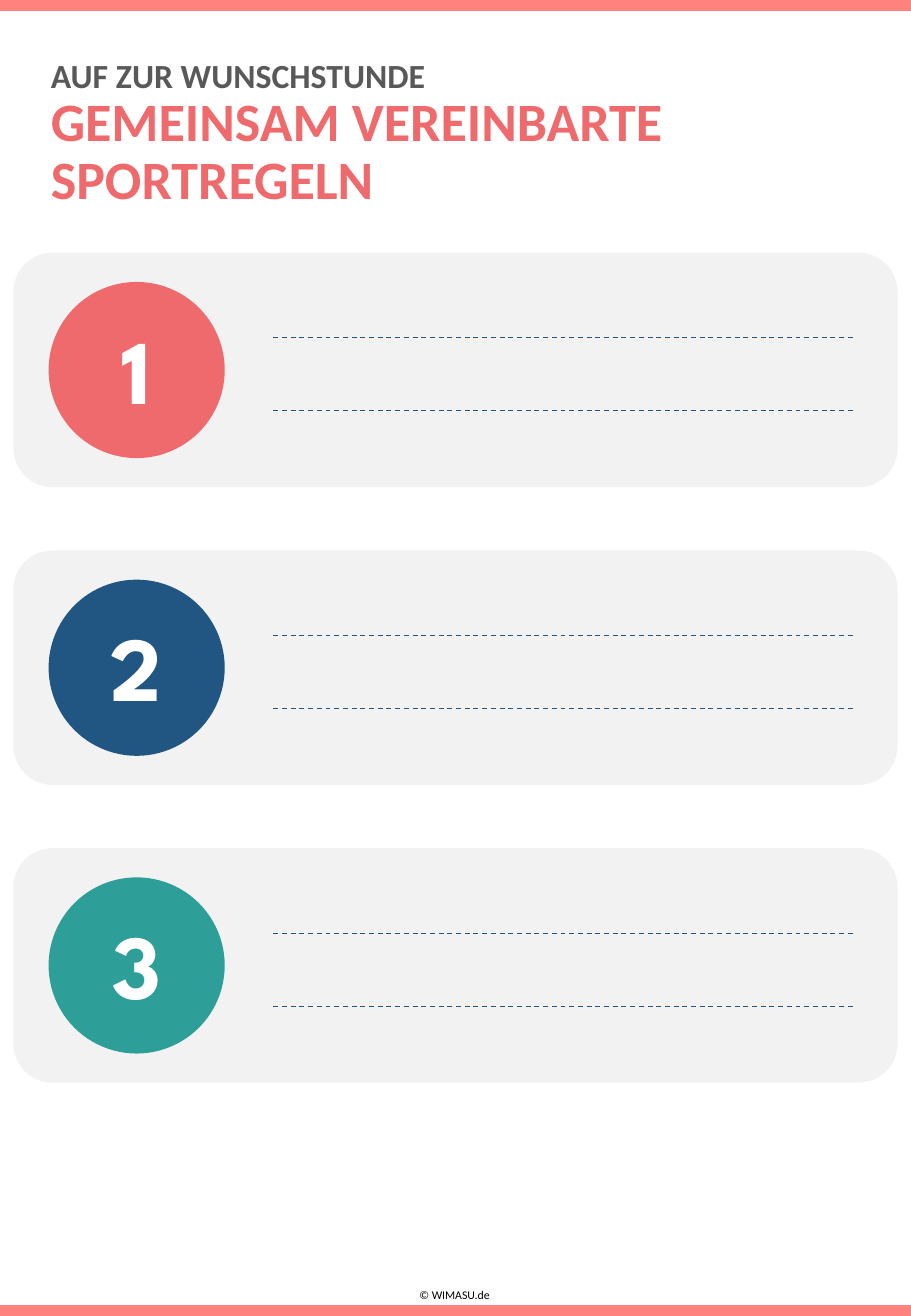
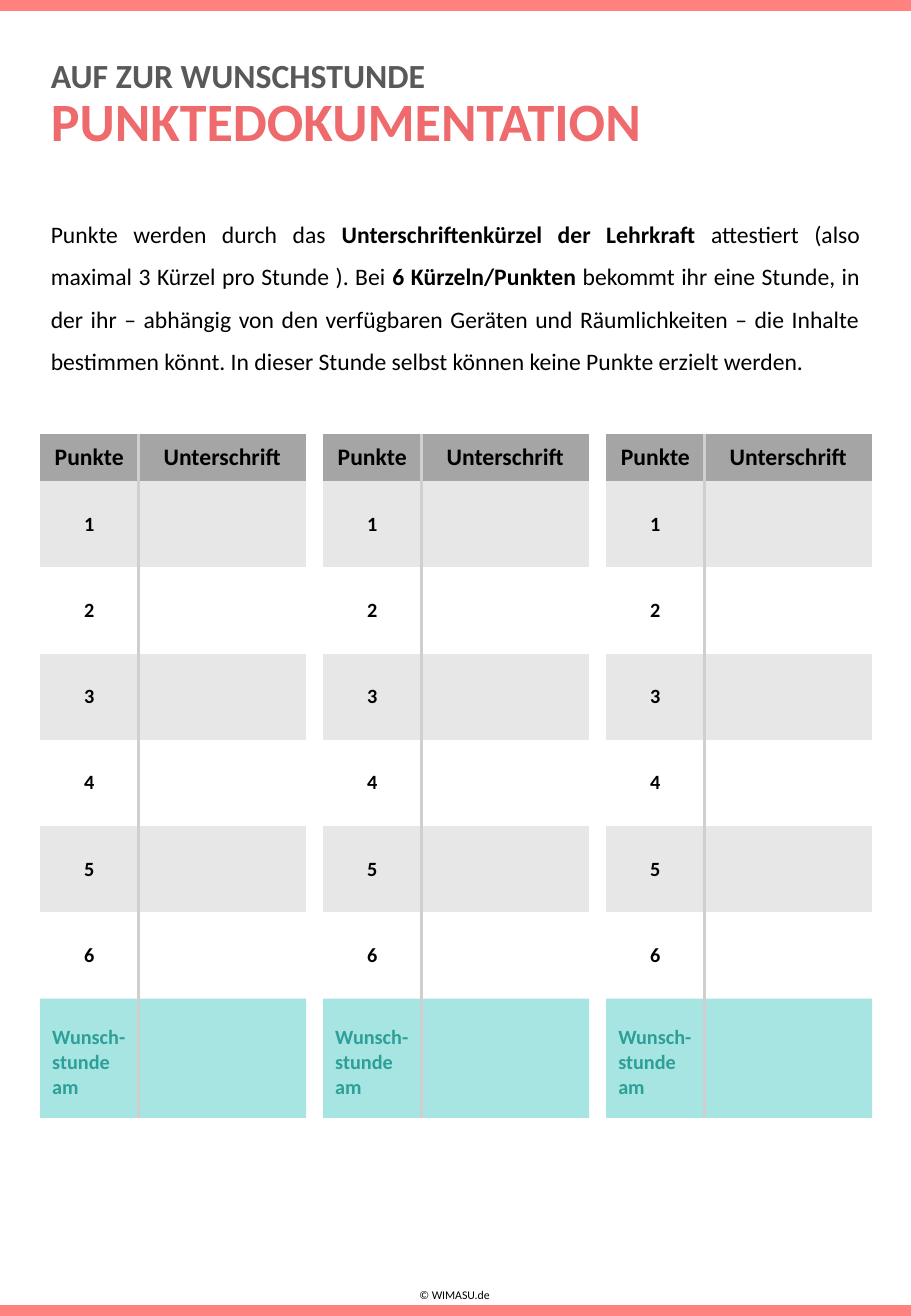
import pptx
import pptx.util
import pptx.dml.color
import pptx.enum.dml
import pptx.enum.shapes
import pptx.enum.text
import pptx.oxml
import pptx.oxml.ns
from pptx.util import Inches

CORAL = "EE6A6C"
BAND = "FF827E"
NAVY = "215682"
TEAL = "2E9F98"
MINT = "4ECDC4"
CARD_GREY = "F2F2F2"
HEAD_GREY = "A5A5A5"
ROW_GREY = "E7E7E7"
RULE_GREY = "D0CECE"
TEXT_GREY = "595959"
BLACK = "000000"
WHITE = "FFFFFF"
PAGE_WIDTH = 7.5
PAGE_HEIGHT = 10.83
BAND_HEIGHT = 0.09
TEXT_LEFT = 0.32
NO_TABLE_STYLE = "{2D5ABB26-0587-4C30-8999-92F81FD0307C}"
ALIGN = pptx.enum.text.PP_ALIGN
ANCHOR = pptx.enum.text.MSO_ANCHOR
SHAPE = pptx.enum.shapes.MSO_SHAPE


def color(value):
    return pptx.dml.color.RGBColor.from_string(value)


def add_span(para, text, size, fill, bold=False, font="Calibri"):
    span = para.add_run()
    span.text = text
    span.font.name = font
    span.font.size = pptx.util.Pt(size)
    span.font.bold = bold
    span.font.color.rgb = color(fill)


def add_box(page, left, top, width, height, align=ALIGN.LEFT, spacing=1.0, wrap=True):
    box = page.shapes.add_textbox(Inches(left), Inches(top), Inches(width), Inches(height))
    box.text_frame.word_wrap = wrap
    para = box.text_frame.paragraphs[0]
    para.alignment = align
    para.line_spacing = spacing
    return box, para


def add_shape(page, kind, left, top, width, height, fill):
    shape = page.shapes.add_shape(kind, Inches(left), Inches(top), Inches(width), Inches(height))
    shape.shadow.inherit = False
    shape.fill.solid()
    shape.fill.fore_color.rgb = color(fill)
    shape.line.fill.background()
    return shape


def add_writing_line(page, left, right, top):
    line = page.shapes.add_connector(
        pptx.enum.shapes.MSO_CONNECTOR.STRAIGHT,
        Inches(left), Inches(top), Inches(right), Inches(top))
    line.line.color.rgb = color(NAVY)
    line.line.width = pptx.util.Pt(0.75)
    line.line.dash_style = pptx.enum.dml.MSO_LINE.DASH
    line._element.spPr.append(pptx.oxml.parse_xml(
        f"<a:effectLst {pptx.oxml.ns.nsdecls('a')}/>"))


def add_page(deck, title):
    page = deck.slides.add_slide(deck.slide_layouts[6])
    for top in (0, PAGE_HEIGHT - BAND_HEIGHT):
        add_shape(page, SHAPE.RECTANGLE, 0, top, PAGE_WIDTH, BAND_HEIGHT, BAND)
    footer, para = add_box(page, 3.34, 10.55, 0.79, 0.22, ALIGN.RIGHT, wrap=False)
    footer.text_frame.auto_size = pptx.enum.text.MSO_AUTO_SIZE.SHAPE_TO_FIT_TEXT
    add_span(para, "© WIMASU.de", 7, BLACK)
    kicker, para = add_box(page, TEXT_LEFT, 0.47, 5.77, 0.37, spacing=0.9)
    kicker.text_frame.vertical_anchor = ANCHOR.BOTTOM
    add_span(para, "AUF ZUR WUNSCHSTUNDE", 20, TEXT_GREY, True)
    heading, para = add_box(page, TEXT_LEFT, 0.73, 5.77, 1.04, spacing=0.9)
    add_span(para, title, 32, CORAL, True)
    return page


def add_rule_card(page, number, top, fill):
    add_shape(page, SHAPE.ROUNDED_RECTANGLE, 0.11, top, 7.28, 1.93, CARD_GREY)
    add_shape(page, SHAPE.OVAL, 0.4, top + 0.24, 1.45, 1.45, fill)
    box, para = add_box(page, 0.4, top + 0.55, 1.45, 0.84, ALIGN.CENTER, 0.9)
    add_span(para, str(number), 54, WHITE, True, "League Spartan")
    for offset in (0.7, 1.3):
        add_writing_line(page, 2.25, 7.05, top + offset)


def fill_cell(cell, fill, alpha=None):
    cell.fill.solid()
    cell.fill.fore_color.rgb = color(fill)
    if alpha:
        tint = cell._tc.tcPr.find(".//" + pptx.oxml.ns.qn("a:srgbClr"))
        tint.append(pptx.oxml.parse_xml(
            f"<a:alpha {pptx.oxml.ns.nsdecls('a')} val='{alpha * 1000}'/>"))


def add_cell_border(cell, side):
    cell._tc.get_or_add_tcPr().insert(0, pptx.oxml.parse_xml(
        f"<a:{side} {pptx.oxml.ns.nsdecls('a')} w='19050'>"
        f"<a:solidFill><a:srgbClr val='{RULE_GREY}'/></a:solidFill></a:{side}>"))


def write_centered(cell, text, size):
    cell.vertical_anchor = ANCHOR.MIDDLE
    para = cell.text_frame.paragraphs[0]
    para.alignment = ALIGN.CENTER
    add_span(para, text, size, BLACK, True)


def add_points_table(page, left, top):
    heights = [0.39] + [0.71] * 6 + [0.98]
    table = page.shapes.add_table(
        len(heights), 2, Inches(left), Inches(top), Inches(2.19), Inches(sum(heights))).table
    table.first_row = False
    table.horz_banding = False
    table._tbl.tblPr.find(pptx.oxml.ns.qn("a:tableStyleId")).text = NO_TABLE_STYLE
    for column, width in zip(table.columns, (0.81, 1.38)):
        column.width = Inches(width)
    last = len(heights) - 1
    fills = [HEAD_GREY] + [ROW_GREY, WHITE] * 3 + [MINT]
    for index, (height, fill) in enumerate(zip(heights, fills)):
        table.rows[index].height = Inches(height)
        for column, side in enumerate(("lnR", "lnL")):
            cell = table.cell(index, column)
            fill_cell(cell, fill, 50 if index == last else None)
            add_cell_border(cell, side)
        if 0 < index < last:
            write_centered(table.cell(index, 0), str(index), 12)
    for column, label in enumerate(("Punkte", "Unterschrift")):
        write_centered(table.cell(0, column), label, 14)
    wish = table.cell(last, 0)
    wish.margin_top = Inches(0.22)
    para = wish.text_frame.paragraphs[0]
    add_span(para, "Wunsch-", 12, TEAL, True)
    para.add_line_break()
    add_span(para, "stunde am", 12, TEAL, True)


def add_rules_page(deck):
    page = add_page(deck, "GEMEINSAM VEREINBARTE SPORTREGELN")
    for index, fill in enumerate((CORAL, NAVY, TEAL)):
        add_rule_card(page, index + 1, 2.08 + 2.45 * index, fill)


def add_points_page(deck):
    page = add_page(deck, "PUNKTEDOKUMENTATION")
    box, para = add_box(page, TEXT_LEFT, 1.64, 6.86, 1.48, ALIGN.JUSTIFY, 1.5)
    for text, bold in (
        ("Punkte werden durch das ", False),
        ("Unterschriftenkürzel der Lehrkraft", True),
        (" attestiert (also maximal 3 Kürzel pro Stunde ). Bei ", False),
        ("6 Kürzeln/Punkten", True),
        (" bekommt ihr eine Stunde, in der ihr – abhängig von den verfügbaren Geräten und "
         "Räumlichkeiten – die Inhalte bestimmen könnt. In dieser Stunde selbst können "
         "keine Punkte erzielt werden.", False),
    ):
        add_span(para, text, 14, BLACK, bold)
    for index in range(3):
        add_points_table(page, 0.33 + 2.33 * index, 3.57)


def main():
    deck = pptx.Presentation()
    deck.slide_width = Inches(PAGE_WIDTH)
    deck.slide_height = Inches(PAGE_HEIGHT)
    add_rules_page(deck)
    add_points_page(deck)
    deck.save("out.pptx")


if __name__ == "__main__":
    main()
